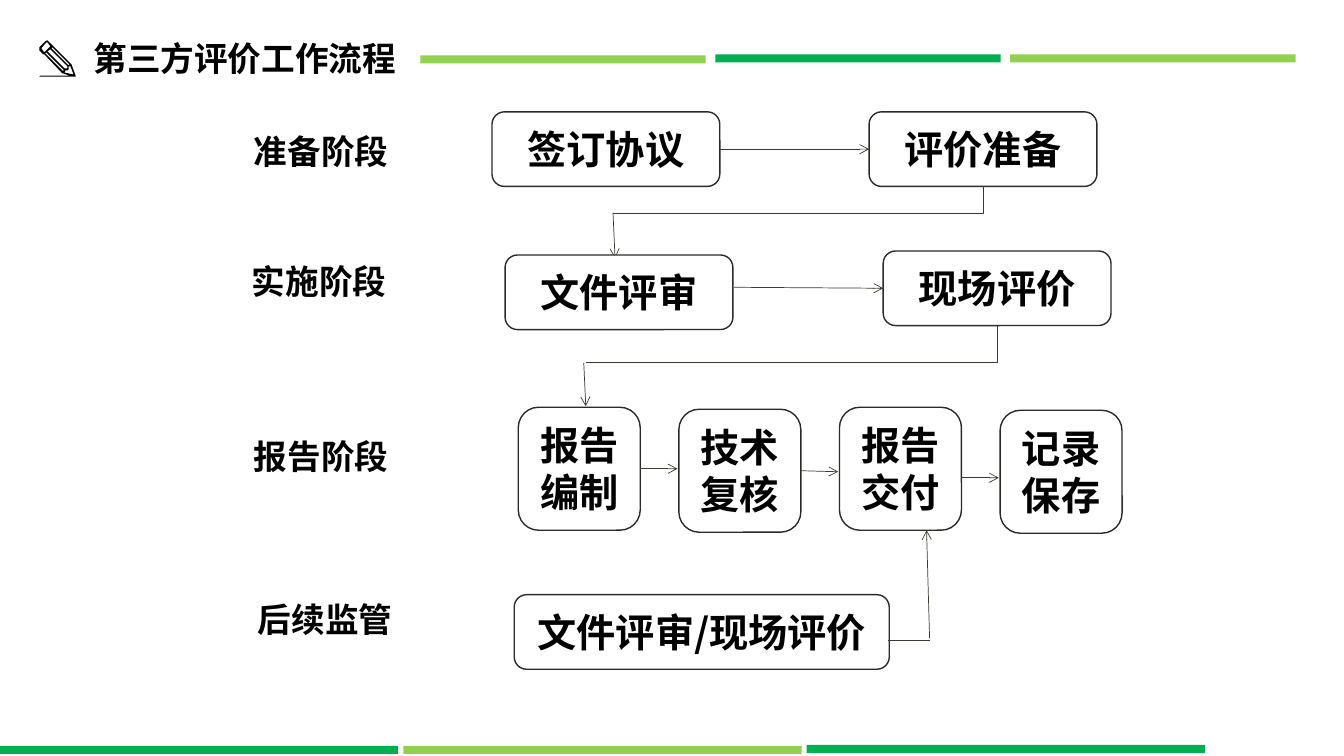
from lxml import etree
from pptx import Presentation
from pptx.dml.color import RGBColor
from pptx.enum.shapes import MSO_CONNECTOR, MSO_SHAPE
from pptx.enum.text import MSO_ANCHOR, MSO_AUTO_SIZE, PP_ALIGN
from pptx.oxml.ns import qn
from pptx.util import Inches, Pt

STRAIGHT, ELBOW = MSO_CONNECTOR.STRAIGHT, MSO_CONNECTOR.ELBOW
RECTANGLE, ROUNDED = MSO_SHAPE.RECTANGLE, MSO_SHAPE.ROUNDED_RECTANGLE
MIDDLE, CENTER, LEFT = MSO_ANCHOR.MIDDLE, PP_ALIGN.CENTER, PP_ALIGN.LEFT
FIT_SHAPE = MSO_AUTO_SIZE.SHAPE_TO_FIT_TEXT

COLORS = {"ink": "000000", "paper": "FFFFFF", "border": "2C2A24",
          "arrow": "3C3930", "green": "00B050", "lime": "92D050"}
FONT = "Noto Sans CJK SC"
HEADING = {"size": Pt(24), "bold": True, "name": FONT}
STEP = {"size": Pt(28), "bold": True, "name": FONT}
STEP_FRAME = {"word_wrap": True, "vertical_anchor": MIDDLE}
TITLE_FRAME = {"word_wrap": True, "auto_size": FIT_SHAPE}
STAGE_FRAME = {"word_wrap": False, "auto_size": FIT_SHAPE}
BOTTOM, LEFT_SIDE, RIGHT_SIDE = 2, 1, 3

PENCIL = [
    [(36, 36), (36, 35), (32, 24), (13, 5), (9, 1), (8, 0), (6, 1), (0, 7),
     (0, 10), (4, 14), (5, 14), (23, 33), (24, 33), (30, 35), (1, 35),
     (0, 35.5), (1, 36)],
    [(34, 34), (25, 32), (26, 30), (28, 30), (29, 29), (29, 26), (31, 26)],
    [(13, 7), (30, 24), (29, 25), (12, 8)],
    [(11, 9), (28, 26), (28, 28), (25, 28), (8, 11)],
    [(1, 8), (2, 8), (7, 2), (8, 2), (11, 6), (5, 12), (2, 8)],
    [(7, 12), (24, 29), (24, 31), (6, 13)],
]


def rgb(key):
    """Return the named colour."""
    return RGBColor.from_string(COLORS[key])


def apply(target, values):
    """Set each format value on the target."""
    for attribute, value in values.items():
        setattr(target, attribute, value)


def write(shape, wording, font_format, frame_format, alignment):
    """Put formatted wording in a shape."""
    frame = shape.text_frame
    apply(frame, frame_format)
    paragraph = frame.paragraphs[0]
    paragraph.alignment = alignment
    run = paragraph.add_run()
    run.text = wording
    apply(run.font, font_format)
    run.font.color.rgb = rgb("ink")
    etree.SubElement(run.font._element, qn("a:ea"), typeface=FONT)


def paint(shape, fill, border=None):
    """Fill a shape and draw its border if it has one."""
    shape.shadow.inherit = False
    shape.fill.solid()
    shape.fill.fore_color.rgb = rgb(fill)
    if border:
        shape.line.color.rgb = rgb(border)
        shape.line.width = Pt(1)
    else:
        shape.line.fill.background()


def label(slide, box, wording, frame_format):
    """Add a heading text box."""
    text_box = slide.shapes.add_textbox(*map(Inches, box))
    write(text_box, wording, HEADING, frame_format, LEFT)


def step(slide, wording, left, top, width=2.26, height=0.74):
    """Add one rounded step of the flow."""
    shape = slide.shapes.add_shape(ROUNDED, *map(Inches, (left, top, width, height)))
    paint(shape, "paper", "border")
    write(shape, wording, STEP, STEP_FRAME, CENTER)
    return shape


def style_line(connector, head):
    """Give a connector its thin line and optional arrowhead."""
    connector.line.color.rgb = rgb("arrow")
    connector.line.width = Pt(0.5)
    if head:
        etree.SubElement(connector.line._get_or_add_ln(), qn("a:tailEnd"), type="arrow")
    etree.SubElement(connector._element.spPr, qn("a:effectLst"))


def link(slide, start, end, source=None, target=None, head=True):
    """Draw a straight line, joined to the steps given."""
    connector = slide.shapes.add_connector(STRAIGHT, *map(Inches, (*start, *end)))
    if source:
        connector.begin_connect(source, RIGHT_SIDE)
    if target:
        connector.end_connect(target, LEFT_SIDE)
    style_line(connector, head)


def turn_back(slide, source, end_x, end_y):
    """Draw a line down from a step and then left to a point."""
    start_x = source.left + source.width // 2
    start_y = source.top + source.height
    end_x, end_y = Inches(end_x), Inches(end_y)
    connector = slide.shapes.add_connector(ELBOW, start_x, start_y, end_x, end_y)
    connector.begin_connect(source, BOTTOM)
    drop, run = end_y - start_y, start_x - end_x
    properties = connector._element.spPr
    properties.find(qn("a:prstGeom")).set("prst", "bentConnector2")
    properties.xfrm.set("flipH", "0")
    properties.xfrm.set("rot", "5400000")
    apply(connector, {"left": (start_x + end_x - drop) // 2,
                      "top": (start_y + end_y - run) // 2,
                      "width": drop, "height": run})
    style_line(connector, False)


def bars(slide, left, tops, width, height, pitch, fills):
    """Draw a row of evenly spaced colour bars."""
    for index, (top, fill) in enumerate(zip(tops, fills)):
        box = (left + index * pitch, top, width, height)
        paint(slide.shapes.add_shape(RECTANGLE, *map(Inches, box)), fill)


def header(slide, left, top):
    """Draw the pencil, the title and the header bars."""
    label(slide, (left + 0.44, top, 3.67, 0.5), "第三方评价工作流程", TITLE_FRAME)
    first, *cutouts = PENCIL
    builder = slide.shapes.build_freeform(*first[0], scale=Inches(0.01))
    builder.add_line_segments(first[1:])
    for cutout in cutouts:
        builder.move_to(*cutout[0])
        builder.add_line_segments(cutout[1:])
    paint(builder.convert_to_shape(Inches(left), Inches(top + 0.07)), "ink")
    bars(slide, left + 3.78, (top + 0.22, top + 0.21, top + 0.21), 2.83, 0.08,
         2.925, ("lime", "green", "lime"))


def stages(slide, left, top):
    """Name the four stages down the left side."""
    for wording, x, y in (("准备阶段", 0.02, 0), ("实施阶段", 0, 1.29),
                          ("报告阶段", 0.02, 3.03), ("后续监管", 0.06, 4.64)):
        label(slide, (left + x, top + y, 1.55, 0.5), wording, STAGE_FRAME)


def preparation(slide, left, top):
    """Draw the preparation steps and the way to the next stage."""
    agreement = step(slide, "签订协议", left, top)
    readiness = step(slide, "评价准备", left + 3.74, top)
    link(slide, (left + 2.26, top + 0.37), (left + 3.74, top + 0.37), agreement, readiness)
    turn_back(slide, readiness, left + 1.2, top + 1.01)
    link(slide, (left + 1.2, top + 1), (left + 1.22, top + 1.45))


def implementation(slide, left, top):
    """Draw the implementation steps and the way to the next stage."""
    step(slide, "文件评审", left, top + 0.04)
    site_visit = step(slide, "现场评价", left + 3.75, top)
    link(slide, (left + 2.27, top + 0.36), (left + 3.75, top + 0.37), target=site_visit)
    turn_back(slide, site_visit, left + 0.8, top + 1.11)
    link(slide, (left + 0.78, top + 1.11), (left + 0.8, top + 1.54))


def reporting(slide, left, top):
    """Draw the four reporting steps in a row."""
    pitch, width = 1.593, 1.21
    drafting, review, _, _ = [
        step(slide, wording, left + index * pitch, top + drop, width, 1.22)
        for index, (wording, drop) in enumerate(
            (("报告编制", 0), ("技术复核", 0.02), ("报告交付", 0), ("记录保存", 0.03)))]
    for index, (drop, source) in enumerate(((0.61, drafting), (0.64, review), (0.7, None))):
        start = left + width + index * pitch
        link(slide, (start, top + drop), (start + 0.37, top + drop), source)


def supervision(slide, left, top):
    """Draw the follow-up step and its way back to delivery."""
    step(slide, "文件评审/现场评价", left, top, 3.72)
    link(slide, (left + 4.12, top + 0.43), (left + 4.09, top - 0.64))
    link(slide, (left + 3.71, top + 0.45), (left + 4.12, top + 0.45), head=False)


def main():
    """Build the slide and save it."""
    deck = Presentation()
    deck.slide_width, deck.slide_height = Inches(13.33), Inches(7.5)
    slide = deck.slides.add_slide(deck.slide_layouts[6])
    header(slide, 0.39, 0.33)
    preparation(slide, 4.88, 1.11)
    implementation(slide, 5.01, 2.49)
    reporting(slide, 5.14, 4.04)
    stages(slide, 2.4, 1.25)
    supervision(slide, 5.1, 5.9)
    bars(slide, 0, (7.4, 7.4, 7.39), 3.95, 0.08, 4, ("green", "lime", "green"))
    deck.save("out.pptx")


if __name__ == "__main__":
    main()
